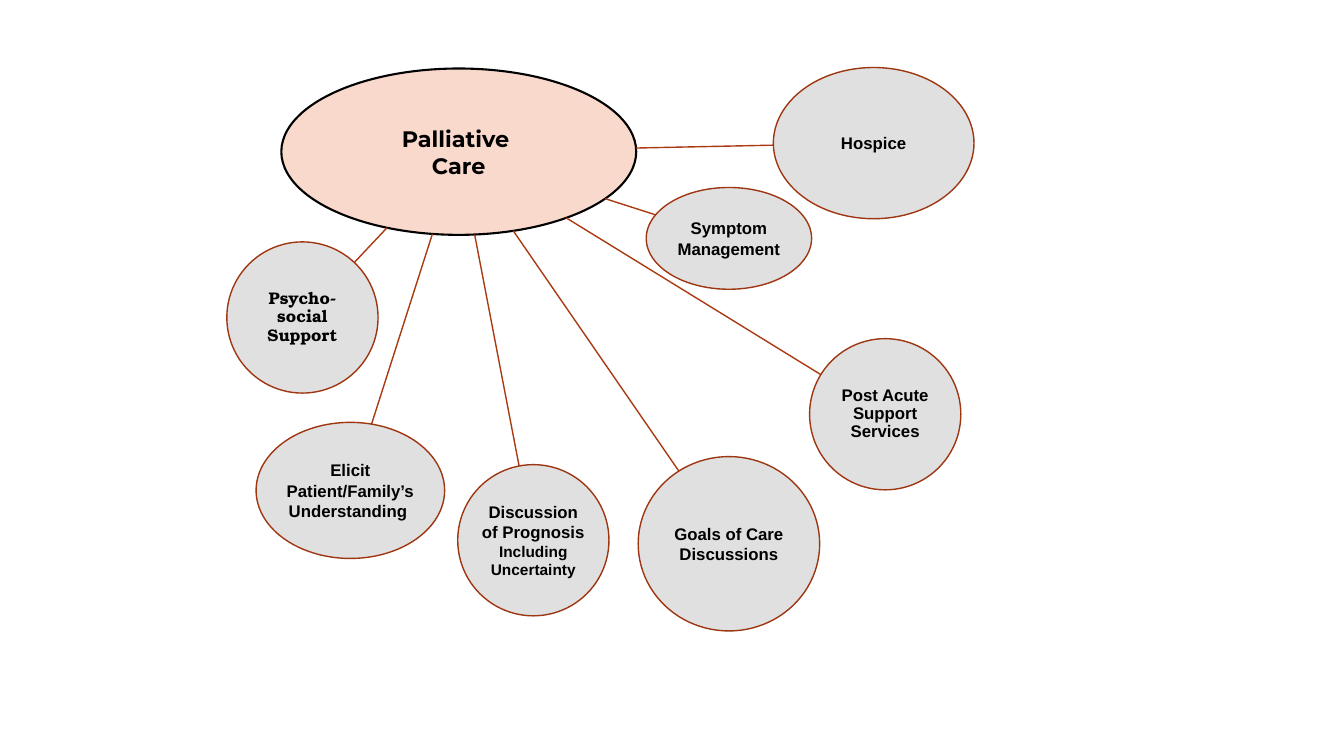
from math import hypot
from pptx import Presentation
from pptx.dml.color import RGBColor
from pptx.enum.shapes import MSO_CONNECTOR, MSO_SHAPE
from pptx.enum.text import MSO_ANCHOR, PP_ALIGN
from pptx.oxml.ns import qn
from pptx.util import Inches, Pt
from lxml.etree import SubElement

COLORS = {
    "hub": "FAD9CD",
    "topic": "E1E0E0",
    "outline": "9E3611",
    "spoke": "A93A12",
    "black": "000000",
}


def rgb(name):
    return RGBColor.from_string(COLORS[name])


def add_bubble(box, lines, fill="topic", line="outline", width=1, font="Arial", sizes=(12, 12), spacing=1.0):
    sp = s.shapes.add_shape(MSO_SHAPE.OVAL, *map(Inches, box))
    sp.shadow.inherit = False
    sp.fill.solid()
    sp.fill.fore_color.rgb = rgb(fill)
    sp.line.color.rgb = rgb(line)
    sp.line.width = Pt(width)
    tf = sp.text_frame
    tf.word_wrap = True
    tf.vertical_anchor = MSO_ANCHOR.MIDDLE
    tf.margin_left = tf.margin_right = tf.margin_top = tf.margin_bottom = Inches(0.01)
    for i, (text, size) in enumerate(zip(lines, sizes)):
        p = tf.add_paragraph() if i else tf.paragraphs[0]
        p.alignment = PP_ALIGN.CENTER
        p.line_spacing = spacing
        r = p.add_run()
        r.text = text
        r.font.name = font
        r.font.size = Pt(size)
        r.font.bold = True
        r.font.color.rgb = rgb("black")


prs = Presentation()
prs.slide_width, prs.slide_height = Inches(13.33), Inches(7.5)
s = prs.slides.add_slide(prs.slide_layouts[6])

hub = (2.79, 0.68, 3.52, 1.65)
add_bubble(hub, ["Palliative ", "Care"], fill="hub", line="black", width=1.5,
           font="Montserrat", sizes=(16, 16))

topics = [
    ((6.41, 1.86, 1.64, 1.01), ["Symptom", "Management"], {}),
    ((7.67, 0.67, 1.99, 1.5), ["Hospice"], {}),
    ((8.03, 3.36, 1.5, 1.5), ["Post Acute Support Services"], {"spacing": 0.9}),
    ((6.33, 4.53, 1.8, 1.73), ["Goals of Care", "Discussions"], {}),
    ((4.54, 4.61, 1.5, 1.5), ["Discussion of Prognosis", "Including Uncertainty"], {"sizes": (12, 11)}),
    ((2.54, 4.19, 1.87, 1.35), ["Elicit Patient/Family’s Understanding "], {}),
    ((2.25, 2.4, 1.5, 1.5), ["Psycho-social Support"], {"font": "TeX Gyre Bonum", "spacing": 0.9}),
]

hub_x, hub_y = hub[0] + hub[2] / 2, hub[1] + hub[3] / 2
for box, lines, style in topics:
    x, y, w, h = box
    dx, dy = x + w / 2 - hub_x, y + h / 2 - hub_y
    start = 1 / hypot(2 * dx / hub[2], 2 * dy / hub[3])
    end = 1 - 1 / hypot(2 * dx / w, 2 * dy / h)
    ends = [v for t in (start, end) for v in (hub_x + t * dx, hub_y + t * dy)]
    spoke = s.shapes.add_connector(MSO_CONNECTOR.STRAIGHT, *map(Inches, ends))
    spoke.line.color.rgb = rgb("spoke")
    spoke.line.width = Pt(1)
    SubElement(spoke._element.spPr, qn("a:effectLst"))
    add_bubble(box, lines, **style)

prs.save("out.pptx")
